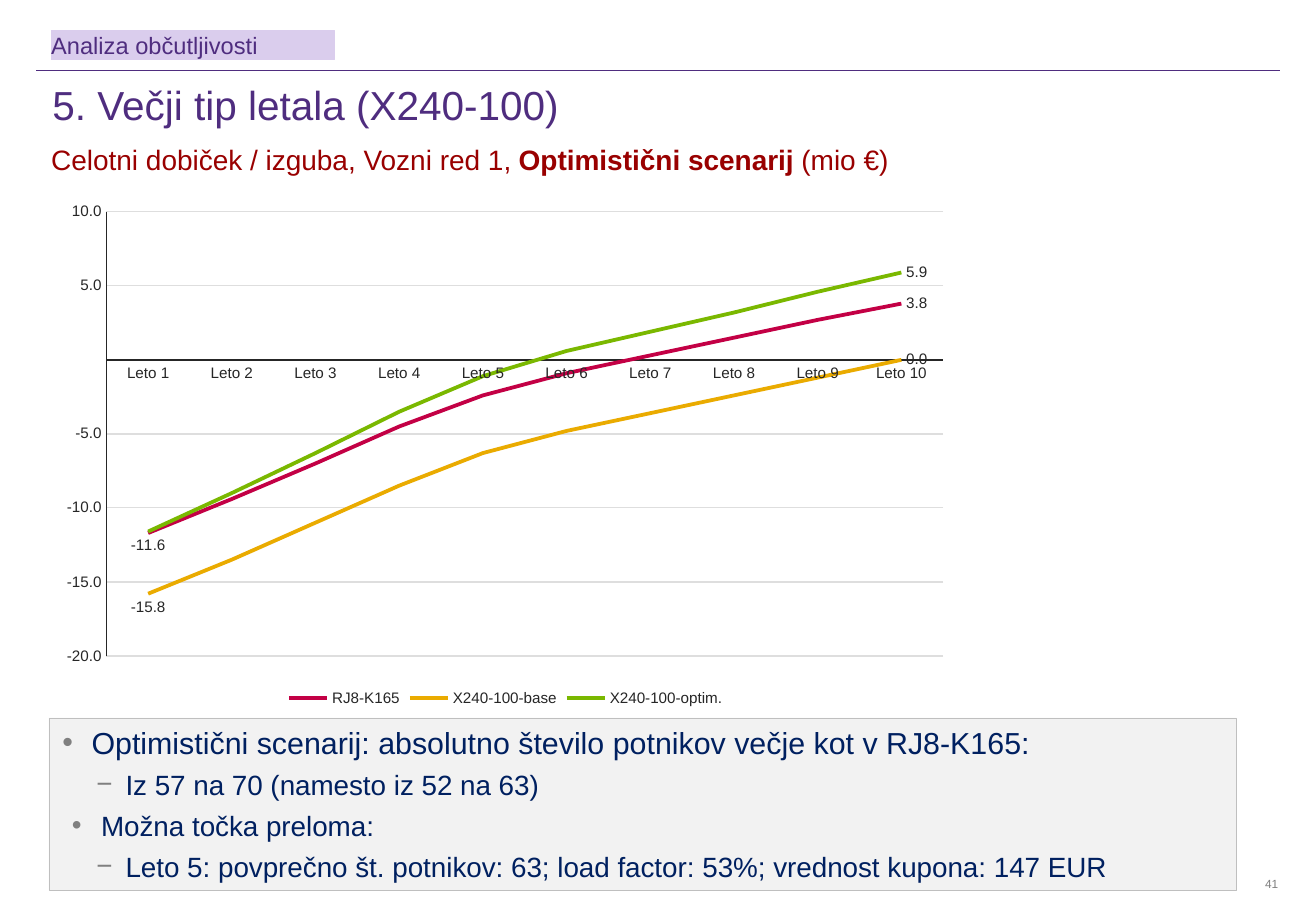
import dataclasses

import lxml.etree
import pptx
import pptx.chart.data
import pptx.dml.color
import pptx.enum.chart
import pptx.enum.shapes
import pptx.enum.text
import pptx.oxml
import pptx.oxml.ns
import pptx.util

Cm = pptx.util.Cm
Pt = pptx.util.Pt
qn = pptx.oxml.ns.qn
rgb = pptx.dml.color.RGBColor.from_string


@dataclasses.dataclass(frozen=True)
class Theme:
    font: str = "Arial"
    purple: str = "4F2D7F"
    lilac: str = "DACDED"
    red: str = "990000"
    navy: str = "002060"
    ink: str = "262626"
    bullet: str = "808080"
    number: str = "7F7F7F"
    panel: str = "F2F2F2"
    panel_line: str = "BFBFBF"
    grid: str = "DEDEDE"
    title_size: float = 24
    lead_size: float = 18
    subtitle_size: float = 16.6
    body_size: float = 16.5
    tag_size: float = 14
    chart_size: float = 9
    number_size: float = 7


theme = Theme()


def write(text, *, paragraph, size, color, bold=False):
    run = paragraph.add_run()
    run.text = text
    run.font.name = theme.font
    run.font.size = Pt(size)
    run.font.bold = bold
    run.font.color.rgb = rgb(color)


def frame_without_margins(shape, wrap=True):
    frame = shape.text_frame
    frame.margin_left = frame.margin_right = frame.margin_top = frame.margin_bottom = 0
    frame.word_wrap = wrap
    return frame


presentation = pptx.Presentation()
presentation.slide_width = Cm(27.51)
presentation.slide_height = Cm(19.05)
slide = presentation.slides.add_slide(presentation.slide_layouts[1])

rule = slide.shapes.add_connector(
    pptx.enum.shapes.MSO_CONNECTOR.STRAIGHT, Cm(0.76), Cm(1.47), Cm(26.75), Cm(1.47))
rule.line.color.rgb = rgb(theme.purple)
rule.line.width = Pt(0.25)
lxml.etree.SubElement(rule.element.spPr, qn("a:effectLst"))

number = slide.shapes.add_textbox(Cm(26.42), Cm(18.34), Cm(0.3), Cm(0.3))
paragraph = frame_without_margins(number, wrap=False).paragraphs[0]
paragraph.alignment = pptx.enum.text.PP_ALIGN.RIGHT
write("41", paragraph=paragraph, size=theme.number_size, color=theme.number)

title = slide.shapes.title
title.left, title.top, title.width, title.height = Cm(0.84), Cm(1.73), Cm(25.91), Cm(1.02)
title.text_frame.vertical_anchor = pptx.enum.text.MSO_ANCHOR.MIDDLE
title.text_frame.auto_size = pptx.enum.text.MSO_AUTO_SIZE.NONE
paragraph = title.text_frame.paragraphs[0]
paragraph.alignment = pptx.enum.text.PP_ALIGN.LEFT
paragraph.line_spacing = 0.9
write("5. Večji tip letala (X240-100)", paragraph=paragraph,
      size=theme.title_size, color=theme.purple)

subtitle = slide.shapes.add_textbox(Cm(1.07), Cm(2.97), Cm(22.63), Cm(0.71))
paragraph = frame_without_margins(subtitle).paragraphs[0]
for text, bold in [("Celotni dobiček / izguba, Vozni red 1, ", False),
                   ("Optimistični scenarij ", True), ("(mio €)", False)]:
    write(text, paragraph=paragraph, size=theme.subtitle_size, color=theme.red, bold=bold)

tag = slide.shapes.add_shape(
    pptx.enum.shapes.MSO_SHAPE.RECTANGLE, Cm(1.07), Cm(0.64), Cm(5.92), Cm(0.61))
tag.shadow.inherit = False
tag.fill.solid()
tag.fill.fore_color.rgb = rgb(theme.lilac)
tag.line.color.rgb = rgb(theme.lilac)
tag.line.width = Pt(0.75)
paragraph = frame_without_margins(tag).paragraphs[0]
paragraph.alignment = pptx.enum.text.PP_ALIGN.LEFT
write("Analiza občutljivosti", paragraph=paragraph, size=theme.tag_size, color=theme.purple)

body = slide.placeholders[1]
body.left, body.top, body.width, body.height = Cm(1.02), Cm(15.01), Cm(24.82), Cm(3.61)
body.fill.solid()
body.fill.fore_color.rgb = rgb(theme.panel)
body.line.color.rgb = rgb(theme.panel_line)
body.line.width = Pt(0.25)
body.text_frame.auto_size = pptx.enum.text.MSO_AUTO_SIZE.NONE
findings = [
    ("Optimistični scenarij: absolutno število potnikov večje kot v RJ8-K165:",
     0, 0.64, "•", theme.lead_size),
    ("Iz 57 na 70 (namesto iz 52 na 63)", 2, 1.35, "−", theme.body_size),
    ("Možna točka preloma:", 1, 0.84, "•", theme.body_size),
    ("Leto 5: povprečno št. potnikov: 63; load factor: 53%; vrednost kupona: 147 EUR",
     2, 1.35, "−", theme.body_size),
]
for index, (text, level, indent, bullet, size) in enumerate(findings):
    paragraph = body.text_frame.add_paragraph() if index else body.text_frame.paragraphs[0]
    paragraph.level = level
    properties = paragraph._p.get_or_add_pPr()
    properties.set("marL", str(Cm(indent)))
    properties.set("indent", str(Cm(-0.61)))
    bullet_color = lxml.etree.SubElement(properties, qn("a:buClr"))
    lxml.etree.SubElement(bullet_color, qn("a:srgbClr"), val=theme.bullet)
    lxml.etree.SubElement(properties, qn("a:buFont"), typeface=theme.font)
    lxml.etree.SubElement(properties, qn("a:buChar"), char=bullet)
    paragraph.space_before = Pt(4.4 if index else 0)
    write(text, paragraph=paragraph, size=size, color=theme.navy)

profit_series = [
    ("RJ8-K165", "C30045", [-11.7, -9.4, -7.0, -4.5, -2.4, -0.9, 0.3, 1.5, 2.7, 3.8], [9]),
    ("X240-100-base", "EAAB00",
     [-15.8, -13.5, -11.0, -8.5, -6.3, -4.8, -3.6, -2.4, -1.2, 0.0], [0, 9]),
    ("X240-100-optim.", "7AB800",
     [-11.6, -9.0, -6.3, -3.5, -1.1, 0.6, 1.9, 3.2, 4.6, 5.9], [0, 9]),
]
chart_data = pptx.chart.data.CategoryChartData(number_format="0.0")
chart_data.categories = [f"Leto {year}" for year in range(1, 11)]
for name, color, values, labelled in profit_series:
    chart_data.add_series(name, values)
chart = slide.shapes.add_chart(
    pptx.enum.chart.XL_CHART_TYPE.LINE, Cm(1.02), Cm(4.04), Cm(19.1), Cm(10.85), chart_data).chart
chart.has_title = False
chart.font.name = theme.font
chart.font.size = Pt(theme.chart_size)
chart.font.color.rgb = rgb(theme.ink)
chart.has_legend = True
chart.legend.position = pptx.enum.chart.XL_LEGEND_POSITION.BOTTOM
chart.legend.include_in_layout = False

plot_area = chart._chartSpace.chart.plotArea
for old_layout in plot_area.findall(qn("c:layout")):
    plot_area.remove(old_layout)
layout = lxml.etree.Element(qn("c:layout"))
manual = lxml.etree.SubElement(layout, qn("c:manualLayout"))
for key, value in [("layoutTarget", "inner"), ("xMode", "edge"), ("yMode", "edge"),
                   ("x", "0.063"), ("y", "0.036"), ("w", "0.916"), ("h", "0.856")]:
    lxml.etree.SubElement(manual, qn(f"c:{key}"), val=value)
plot_area.insert(0, layout)

for axis in (chart.category_axis, chart.value_axis):
    axis.major_tick_mark = axis.minor_tick_mark = pptx.enum.chart.XL_TICK_MARK.NONE
    axis.format.line.color.rgb = rgb(theme.ink)
    axis.format.line.width = Pt(1)
value_axis = chart.value_axis
value_axis.minimum_scale, value_axis.maximum_scale, value_axis.major_unit = -20, 10, 5
value_axis.tick_labels.number_format = '#,##0.0;\\-#,##0.0;" "'
value_axis.tick_labels.number_format_is_linked = False
value_axis.major_gridlines.format.line.color.rgb = rgb(theme.grid)
value_axis.major_gridlines.format.line.width = Pt(0.75)

chart.plots[0].vary_by_categories = False
label_positions = {0: pptx.enum.chart.XL_LABEL_POSITION.BELOW,
                   9: pptx.enum.chart.XL_LABEL_POSITION.RIGHT}
for series, (name, color, values, labelled) in zip(chart.plots[0].series, profit_series):
    series.smooth = False
    series.marker.style = pptx.enum.chart.XL_MARKER_STYLE.NONE
    series.format.line.color.rgb = rgb(color)
    series.format.line.width = Pt(2.25)
    series.data_labels.show_value = False
    for index in labelled:
        series.points[index].data_label.position = label_positions[index]

presentation.save("out.pptx")
